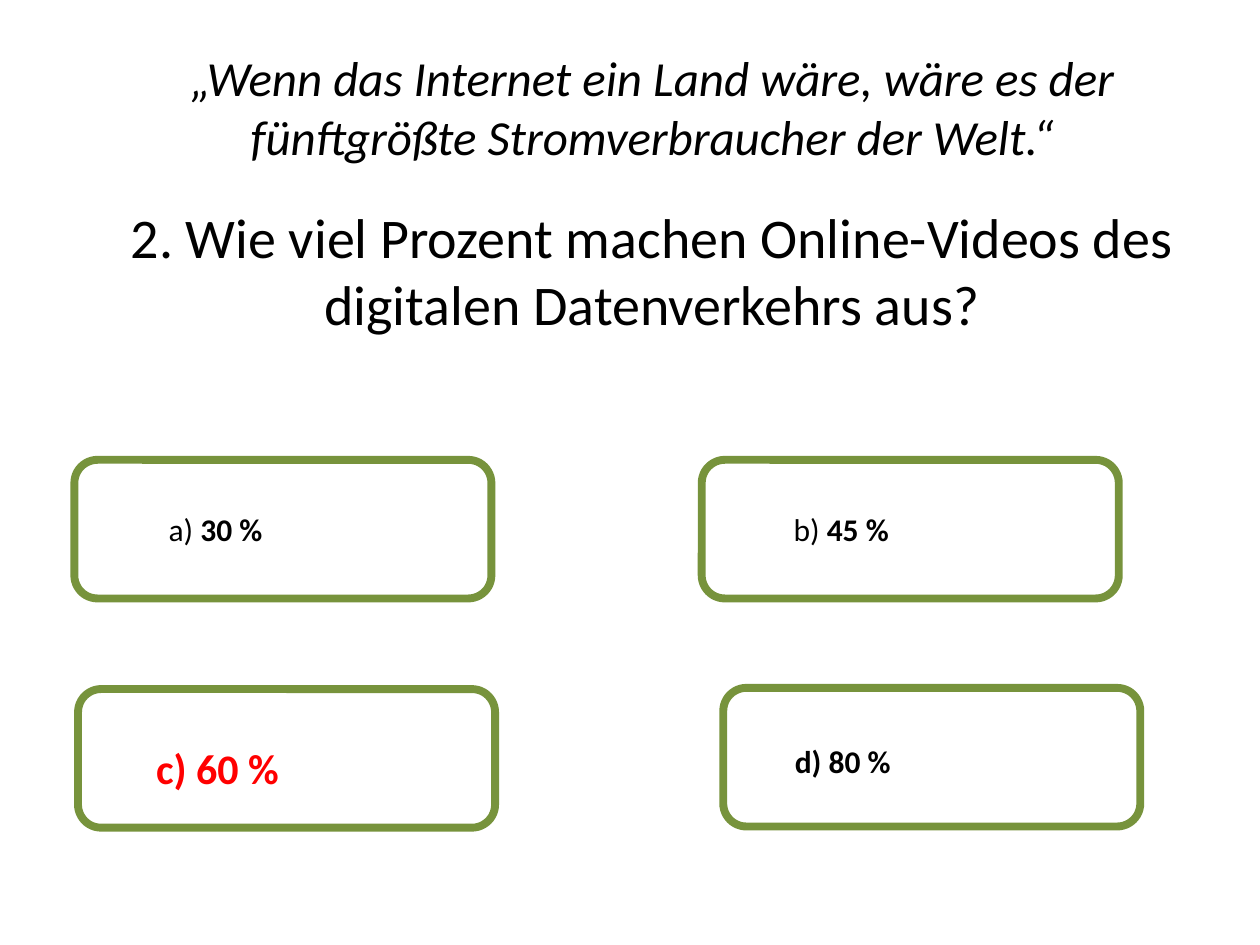
import pptx
import pptx.util
import pptx.dml.color
import pptx.enum.shapes
import pptx.enum.text

Pt = pptx.util.Pt


def color(value):
    return pptx.dml.color.RGBColor.from_string(value)


def style(span, size, bold=False, italic=False, ink="000000"):
    span.font.name = "Calibri"
    span.font.size = Pt(size)
    span.font.bold = bold
    span.font.italic = italic
    span.font.color.rgb = color(ink)


deck = pptx.Presentation()
deck.slide_width = Pt(720)
deck.slide_height = Pt(540)
page = deck.slides.add_slide(deck.slide_layouts[6])

title = page.shapes.add_textbox(Pt(38.2), Pt(82.8), Pt(668.9), Pt(90))
frame = title.text_frame
frame.word_wrap = True
frame.vertical_anchor = pptx.enum.text.MSO_ANCHOR.MIDDLE
frame.margin_bottom = Pt(39.6)
frame.text = (
    "„Wenn das Internet ein Land wäre, wäre es der fünftgrößte Stromverbraucher der Welt.“\n"
    "2. Wie viel Prozent machen Online-Videos des digitalen Datenverkehrs aus?"
)
quote, question = frame.paragraphs
quote.space_after = Pt(21)
style(quote.runs[0], 28, italic=True)
style(question.runs[0], 32)
for para in frame.paragraphs:
    para.alignment = pptx.enum.text.PP_ALIGN.CENTER

answers = [
    (42.5, 262.8, 89.3, 288, 168.5, 28.8, [("a) ", False), ("30 %", True)], 18, "000000"),
    (401, 262.8, 446.4, 288, 153.4, 28.8, [("b) ", False), ("45 %", True)], 18, "000000"),
    (44.6, 393.8, 82.1, 420.5, 136.1, 36, [("c) 60 %", True)], 24, "FF0000"),
    (413.3, 393.1, 447.1, 420.5, 147.6, 28.8, [("d) 80 %", True)], 18, "000000"),
]
for left, top, text_left, text_top, width, height, parts, size, ink in answers:
    box = page.shapes.add_shape(
        pptx.enum.shapes.MSO_SHAPE.ROUNDED_RECTANGLE, Pt(left), Pt(top), Pt(238.3), Pt(79.2)
    )
    box.shadow.inherit = False
    box.fill.background()
    box.line.color.rgb = color("77933C")
    box.line.width = Pt(4.5)

    label = page.shapes.add_textbox(Pt(text_left), Pt(text_top), Pt(width), Pt(height))
    label.text_frame.word_wrap = True
    label.text_frame.auto_size = pptx.enum.text.MSO_AUTO_SIZE.SHAPE_TO_FIT_TEXT
    para = label.text_frame.paragraphs[0]
    for text, bold in parts:
        span = para.add_run()
        span.text = text
        style(span, size, bold=bold, ink=ink)

deck.save("out.pptx")
